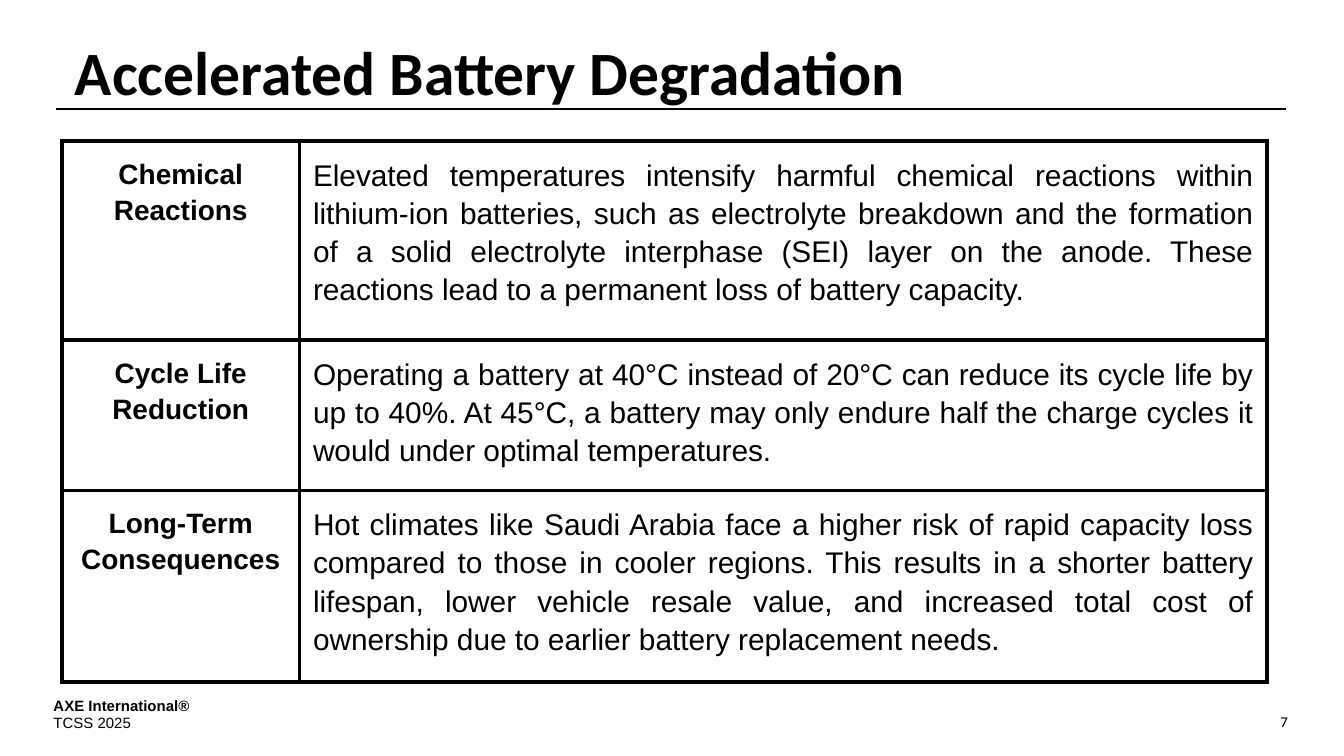
from dataclasses import dataclass

import pptx
import pptx.util
import pptx.dml.color
import pptx.enum.shapes
import pptx.enum.text
import pptx.oxml.ns
from lxml import etree

Pt = pptx.util.Pt
Align = pptx.enum.text.PP_ALIGN
qn = pptx.oxml.ns.qn


@dataclass(frozen=True)
class Theme:
    ink: str = "000000"
    paper: str = "FFFFFF"
    head: str = "Calibri"
    body: str = "Arial"
    title: float = 33
    label: float = 15
    text: float = 16
    small: float = 8


theme = Theme()
ink = pptx.dml.color.RGBColor.from_string(theme.ink)
paper = pptx.dml.color.RGBColor.from_string(theme.paper)


def style(para, text, face, size, bold=False, align=Align.LEFT):
    para.text = text
    para.alignment = align
    font = para.font
    font.name, font.size, font.bold = face, Pt(size), bold
    font.color.rgb = ink


def border(cell, width):
    """Draw all four edges of a table cell; edges must precede its fill."""
    props = cell._tc.get_or_add_tcPr()
    for spot, side in enumerate(("a:lnL", "a:lnR", "a:lnT", "a:lnB")):
        line = etree.Element(qn(side), w=str(Pt(width)))
        fill = etree.SubElement(line, qn("a:solidFill"))
        etree.SubElement(fill, qn("a:srgbClr"), val=theme.ink)
        props.insert(spot, line)


deck = pptx.Presentation()
deck.slide_width, deck.slide_height = Pt(720), Pt(405)
slide = deck.slides.add_slide(deck.slide_layouts[6])
shapes = slide.shapes

# Rule under the title
rule = shapes.add_connector(
    pptx.enum.shapes.MSO_CONNECTOR.STRAIGHT, Pt(30.2), Pt(58.5), Pt(689), Pt(58.5))
rule.line.color.rgb = ink
rule.line.width = Pt(0.75)
etree.SubElement(rule._element.spPr, qn("a:effectLst"))

# Title, footer and page number: box, then lines of (text, face, size, bold, align)
boxes = [
    ((33.1, 14.4, 640.8, 40.3), [
        ("Accelerated Battery Degradation", theme.head, theme.title, True, Align.LEFT)]),
    ((21.6, 369.4, 206.6, 26.6), [
        ("AXE International®", theme.body, theme.small, True, Align.LEFT),
        ("TCSS 2025", theme.body, theme.small, False, Align.LEFT)]),
    ((542.2, 378, 154.8, 17.3), [
        ("7", theme.head, theme.small, False, Align.RIGHT)]),
]
for place, lines in boxes:
    frame = shapes.add_textbox(*map(Pt, place)).text_frame
    frame.word_wrap = True
    for i, line in enumerate(lines):
        para = frame.add_paragraph() if i else frame.paragraphs[0]
        style(para, *line)

# Table of effects
rows = [
    (106.6, "Chemical Reactions",
     "Elevated temperatures intensify harmful chemical reactions within "
     "lithium-ion batteries, such as electrolyte breakdown and the formation "
     "of a solid electrolyte interphase (SEI) layer on the anode. These "
     "reactions lead to a permanent loss of battery capacity."),
    (75, "Cycle Life Reduction",
     "Operating a battery at 40°C instead of 20°C can reduce its cycle life by "
     "up to 40%. At 45°C, a battery may only endure half the charge cycles it "
     "would under optimal temperatures."),
    (96, "Long-Term Consequences",
     "Hot climates like Saudi Arabia face a higher risk of rapid capacity loss "
     "compared to those in cooler regions. This results in a shorter battery "
     "lifespan, lower vehicle resale value, and increased total cost of "
     "ownership due to earlier battery replacement needs."),
]
widths = (127.4, 518.4)
high = sum(row[0] for row in rows)
table = shapes.add_table(
    len(rows), 2, Pt(33.1), Pt(75.6), Pt(sum(widths)), Pt(high)).table
table.first_row = table.horz_banding = False
for col, width in zip(table.columns, widths):
    col.width = Pt(width)

for r, (height, label, text) in enumerate(rows):
    table.rows[r].height = Pt(height)
    looks = [(label, theme.body, theme.label, True, Align.CENTER),
             (text, theme.body, theme.text, False, Align.JUSTIFY)]
    for c, look in enumerate(looks):
        cell = table.cell(r, c)
        cell.margin_left = cell.margin_right = Pt(7.2)
        cell.margin_top = cell.margin_bottom = Pt(7.2)
        cell.fill.solid()
        cell.fill.fore_color.rgb = paper
        border(cell, 2.25)
        para = cell.text_frame.paragraphs[0]
        style(para, *look)
        para.line_spacing = 1.15
        para.space_before = para.space_after = Pt(12)

deck.save("out.pptx")
